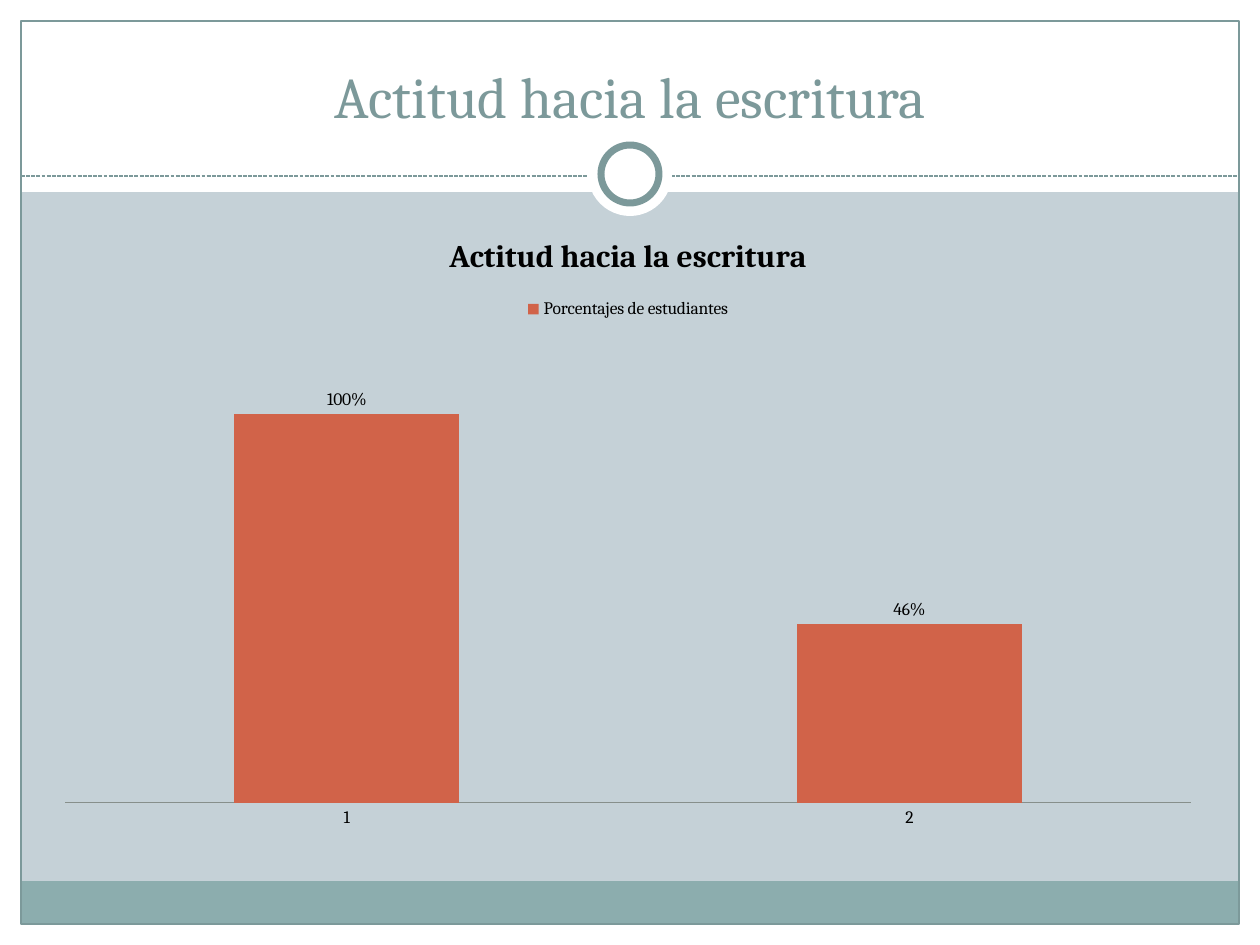
from lxml import etree
from pptx import Presentation
from pptx import util as u
from pptx.chart.data import CategoryChartData
from pptx.dml.color import RGBColor
from pptx.enum import chart as c
from pptx.enum import dml, shapes, text
from pptx.oxml.ns import qn

WHITE = RGBColor(0xFF, 0xFF, 0xFF)
BLACK = RGBColor(0, 0, 0)
BACKGROUND = RGBColor(0xC5, 0xD1, 0xD7)
BAND = RGBColor(0x8C, 0xAD, 0xAE)
TEAL = RGBColor(0x7C, 0x99, 0x9A)
ORANGE = RGBColor(0xD1, 0x63, 0x49)
AXIS = RGBColor(0x87, 0x8F, 0x8B)

PX = u.Inches(1) / 126
WIDTH, HEIGHT = 1260, 945
MARGIN = 21
HEADING = "Actitud hacia la escritura"


def px(*lengths):
    return [u.Emu(round(length * PX)) for length in lengths]


class SlideBuilder:
    """Holds the font and the slide that receives each element."""

    def __init__(self, slide, font="Cambria"):
        self.slide = slide
        self.font = font
        slide.background.fill.solid()
        slide.background.fill.fore_color.rgb = BACKGROUND

    def style(self, font, size, color, bold=False):
        font.name, font.size, font.bold = self.font, u.Pt(size), bold
        font.color.rgb = color

    def shape(self, kind, box, fill=None, line=None, line_width=0.75):
        shape = self.slide.shapes.add_shape(kind, *px(*box))
        shape.shadow.inherit = False
        if fill is None:
            shape.fill.background()
        else:
            shape.fill.solid()
            shape.fill.fore_color.rgb = fill
        if line is None:
            shape.line.fill.background()
        else:
            shape.line.color.rgb = line
            shape.line.width = u.Pt(line_width)

    def rectangle(self, *box, **look):
        self.shape(shapes.MSO_SHAPE.RECTANGLE, box, **look)

    def circle(self, center_x, center_y, diameter, **look):
        box = (center_x - diameter / 2, center_y - diameter / 2, diameter, diameter)
        self.shape(shapes.MSO_SHAPE.OVAL, box, **look)

    def dashed_line(self, *ends):
        connector = self.slide.shapes.add_connector(
            shapes.MSO_CONNECTOR.STRAIGHT, *px(*ends))
        connector.line.color.rgb = TEAL
        connector.line.width = u.Pt(0.75)
        connector.line.dash_style = dml.MSO_LINE.SQUARE_DOT
        etree.SubElement(connector.element.spPr, qn("a:effectLst"))

    def title(self, wording, *box):
        """Fill the title and bring it in front of the backdrop."""
        title = self.slide.shapes.title
        title.left, title.top, title.width, title.height = px(*box)
        title.text_frame.text = wording
        title.text_frame.word_wrap = True
        title.text_frame.auto_size = text.MSO_AUTO_SIZE.NONE
        title.text_frame.vertical_anchor = text.MSO_ANCHOR.BOTTOM
        paragraph = title.text_frame.paragraphs[0]
        paragraph.alignment = text.PP_ALIGN.CENTER
        self.style(paragraph.font, 33, TEAL)
        title.element.getparent().append(title.element)

    def column_chart(self, heading, categories, name, values, *box):
        data = CategoryChartData(number_format="0%")
        data.categories = categories
        data.add_series(name, values)
        chart = self.slide.shapes.add_chart(
            c.XL_CHART_TYPE.COLUMN_CLUSTERED, *px(*box), data).chart
        self.style(chart.font, 10, BLACK)

        chart.has_title = True
        chart.chart_title.text_frame.text = heading
        self.style(chart.chart_title.text_frame.paragraphs[0].font, 18, BLACK, bold=True)
        chart.chart_title.include_in_layout = False
        chart.has_legend = True
        chart.legend.position = c.XL_LEGEND_POSITION.TOP
        chart.legend.include_in_layout = False

        chart.value_axis.visible = False
        chart.value_axis.has_major_gridlines = False
        chart.value_axis.minimum_scale = 0
        chart.value_axis.maximum_scale = 1.2
        chart.category_axis.major_tick_mark = c.XL_TICK_MARK.NONE
        chart.category_axis.format.line.color.rgb = AXIS

        plot = chart.plots[0]
        plot.vary_by_categories = False
        plot.gap_width, plot.overlap = 150, -25
        series = plot.series[0]
        series.format.fill.solid()
        series.format.fill.fore_color.rgb = ORANGE
        labels = series.data_labels
        labels.show_value = True
        labels.number_format, labels.number_format_is_linked = "0%", False
        labels.position = c.XL_LABEL_POSITION.OUTSIDE_END
        self.style(labels.font, 10, BLACK)


def main():
    presentation = Presentation()
    presentation.slide_width, presentation.slide_height = px(WIDTH, HEIGHT)
    builder = SlideBuilder(presentation.slides.add_slide(presentation.slide_layouts[5]))

    inner_width, inner_height = WIDTH - 2 * MARGIN, HEIGHT - 2 * MARGIN
    for box in (
        (0, HEIGHT - MARGIN, WIDTH, MARGIN),
        (0, 0, WIDTH, 192),
        (0, 0, MARGIN, HEIGHT),
        (WIDTH - MARGIN, 0, MARGIN, HEIGHT),
    ):
        builder.rectangle(*box, fill=WHITE)
    builder.rectangle(MARGIN, 881, inner_width, 43, fill=BAND)
    builder.rectangle(MARGIN, MARGIN, inner_width, inner_height, line=TEAL)
    builder.dashed_line(MARGIN, 176, WIDTH - MARGIN, 176)
    builder.circle(WIDTH / 2, 174, 84, fill=WHITE)
    builder.circle(WIDTH / 2, 174, 58, fill=WHITE, line=TEAL, line_width=4)

    builder.title(HEADING, 42, 32, 1176, 104)
    builder.column_chart(HEADING, ["1", "2"], "Porcentajes de estudiantes",
                         [1, 0.46], 42, 210, 1172, 630)
    presentation.save("out.pptx")


if __name__ == "__main__":
    main()
